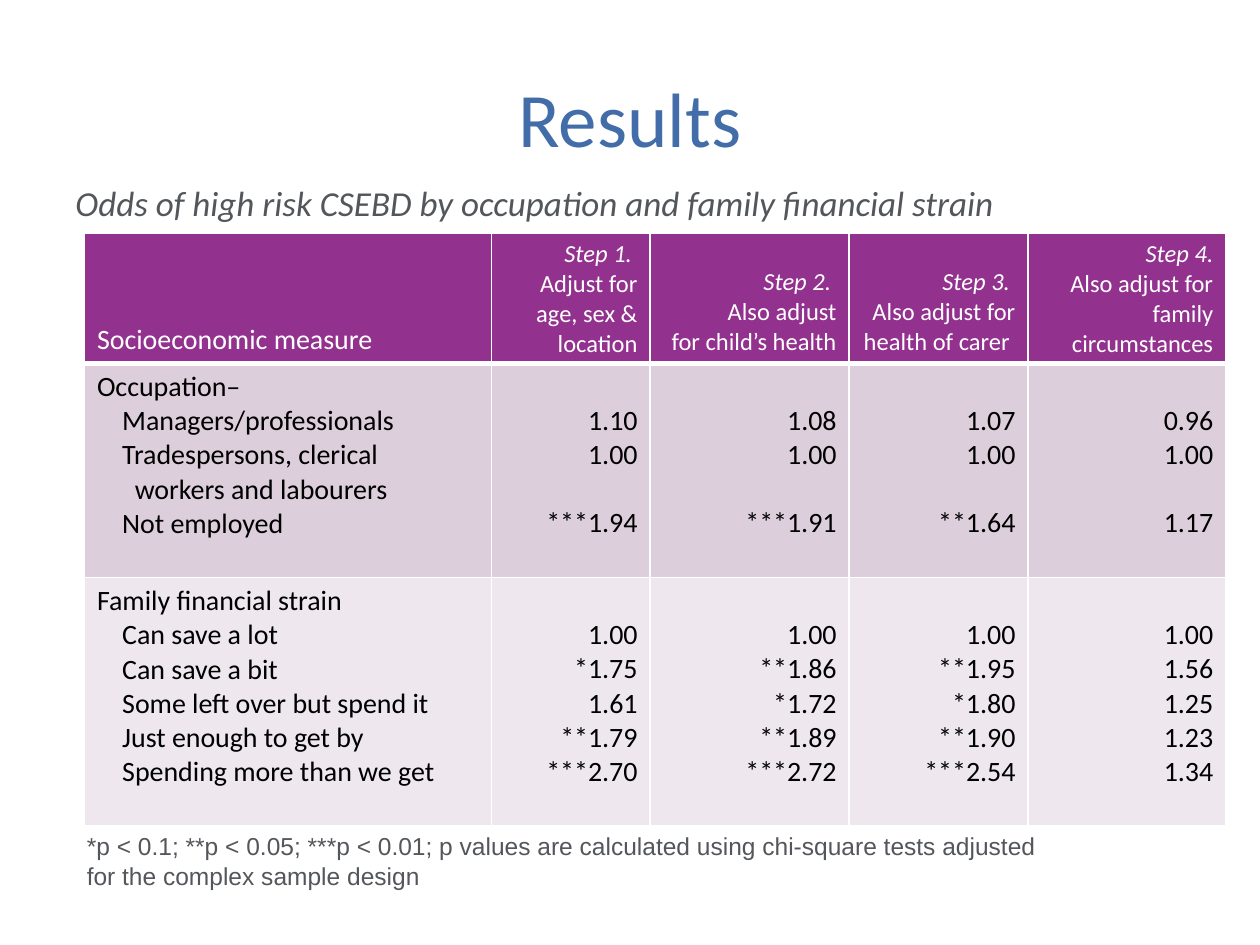
import pptx
import pptx.dml.color
import pptx.enum.text
import pptx.oxml
import pptx.oxml.ns
import pptx.util
from pptx.util import Inches

ALIGN = pptx.enum.text.PP_ALIGN
ANCHOR = pptx.enum.text.MSO_ANCHOR

COLORS = {
    "title": "426DA9",
    "text": "53565A",
    "header": "93328E",
    "occupation": "DCCEDB",
    "strain": "EEE8EE",
    "white": "FFFFFF",
    "black": "000000",
}

LINE_HEIGHT = 0.27
COLUMN_WIDTHS = [3.23, 1.26, 1.58, 1.42, 1.57]
ROW_HEIGHTS = [1.03, 1.7, 1.97]

STEPS = [
    ("Step 1. ", "Adjust for age, sex & location"),
    ("Step 2. ", "Also adjust\vfor child’s health"),
    ("Step 3. ", "Also adjust for health of carer "),
    ("Step 4.", "Also adjust for family circumstances"),
]

MEASURES = [
    {
        "fill": "occupation",
        "labels": [
            ("Occupation–", 0),
            ("Managers/professionals", 0.2),
            ("Tradespersons, clerical", 0.2),
            ("workers and labourers", 0.3),
            ("Not employed", 0.2),
        ],
        "odds": [
            ["1.10", "1.00", "***1.94"],
            ["1.08", "1.00", "***1.91"],
            ["1.07", "1.00", "**1.64"],
            ["0.96", "1.00", "1.17"],
        ],
        "gap_before": 2,
    },
    {
        "fill": "strain",
        "labels": [
            ("Family financial strain", 0),
            ("Can save a lot", 0.2),
            ("Can save a bit", 0.2),
            ("Some left over but spend it", 0.2),
            ("Just enough to get by", 0.2),
            ("Spending more than we get", 0.2),
        ],
        "odds": [
            ["1.00", "*1.75", "1.61", "**1.79", "***2.70"],
            ["1.00", "**1.86", "*1.72", "**1.89", "***2.72"],
            ["1.00", "**1.95", "*1.80", "**1.90", "***2.54"],
            ["1.00", "1.56", "1.25", "1.23", "1.34"],
        ],
        "gap_before": None,
    },
]


def rgb(name):
    return pptx.dml.color.RGBColor.from_string(COLORS[name])


def format_text(text_frame, size, color, font="Calibri", align=ALIGN.LEFT, italic=False):
    for paragraph in text_frame.paragraphs:
        paragraph.alignment = align
        for run in paragraph.runs:
            run.font.name = font
            run.font.size = pptx.util.Pt(size)
            run.font.color.rgb = rgb(color)
            run.font.bold = False
            run.font.italic = italic


def add_text(slide, box, text, anchor=ANCHOR.TOP, **style):
    text_frame = slide.shapes.add_textbox(*map(Inches, box)).text_frame
    text_frame.word_wrap = True
    text_frame.vertical_anchor = anchor
    text_frame.text = text
    format_text(text_frame, **style)


def style_cell(cell, fill, bottom_width=1):
    properties = cell._tc.get_or_add_tcPr()
    for side, width in (("L", 1), ("R", 1), ("T", 1), ("B", bottom_width)):
        properties.append(pptx.oxml.parse_xml(
            f'<a:ln{side} {pptx.oxml.ns.nsdecls("a")} w="{pptx.util.Pt(width)}">'
            f'<a:solidFill><a:srgbClr val="{COLORS["white"]}"/></a:solidFill></a:ln{side}>'
        ))
    cell.fill.solid()
    cell.fill.fore_color.rgb = rgb(fill)


def fill_header(cells):
    for cell in cells:
        style_cell(cell, "header", bottom_width=3)
        cell.vertical_anchor = ANCHOR.BOTTOM
    cells[0].text_frame.text = "Socioeconomic measure"
    format_text(cells[0].text_frame, 16, "white")
    for cell, (step, adjustment) in zip(cells[1:], STEPS):
        paragraph = cell.text_frame.paragraphs[0]
        paragraph.text = f"{step}\v{adjustment}"
        format_text(cell.text_frame, 14, "white", align=ALIGN.RIGHT)
        paragraph.runs[0].font.italic = True


def fill_measure(cells, measure):
    for cell in cells:
        style_cell(cell, measure["fill"])
    label_frame = cells[0].text_frame
    label_frame.text = "\n".join(label for label, indent in measure["labels"])
    for paragraph, (label, indent) in zip(label_frame.paragraphs, measure["labels"]):
        paragraph._p.get_or_add_pPr().set("marL", str(Inches(indent)))
    format_text(label_frame, 16, "black")
    for cell, odds in zip(cells[1:], measure["odds"]):
        cell.margin_top = Inches(0.05 + LINE_HEIGHT)
        cell.text_frame.text = "\n".join(odds)
        format_text(cell.text_frame, 16, "black", align=ALIGN.RIGHT)
        if measure["gap_before"] is not None:
            gap = cell.text_frame.paragraphs[measure["gap_before"]]
            gap.space_before = Inches(LINE_HEIGHT)


def add_odds_table(slide, box):
    table = slide.shapes.add_table(
        len(ROW_HEIGHTS), len(COLUMN_WIDTHS), *map(Inches, box)
    ).table
    table.first_row = False
    table.horz_banding = False
    for column, width in zip(table.columns, COLUMN_WIDTHS):
        column.width = Inches(width)
    for row, height in zip(table.rows, ROW_HEIGHTS):
        row.height = Inches(height)
    header, *body = [list(row.cells) for row in table.rows]
    fill_header(header)
    for cells, measure in zip(body, MEASURES):
        fill_measure(cells, measure)


def add_heading(slide, box):
    left, top, width, height = box
    add_text(slide, (left, top, width, 1.25), "Results", anchor=ANCHOR.MIDDLE,
             size=44, color="title", align=ALIGN.CENTER)
    add_text(slide, (left, top + 1.09, width, height - 1.09),
             "Odds of high risk CSEBD by occupation and family financial strain",
             size=20, color="text", italic=True)


def add_footnote(slide, box):
    add_text(slide, box,
             "*p < 0.1; **p < 0.05; ***p < 0.01; p values are calculated using "
             "chi-square tests adjusted\nfor the complex sample design",
             size=14, color="text", font="Arial")


def main():
    presentation = pptx.Presentation()
    presentation.slide_width = Inches(10)
    presentation.slide_height = Inches(7.5)
    slide = presentation.slides.add_slide(presentation.slide_layouts[6])
    add_heading(slide, (0.5, 0.3, 9, 1.75))
    add_footnote(slide, (0.59, 6.55, 8.82, 0.57))
    add_odds_table(slide, (0.67, 1.85, sum(COLUMN_WIDTHS), sum(ROW_HEIGHTS)))
    presentation.save("out.pptx")


if __name__ == "__main__":
    main()
